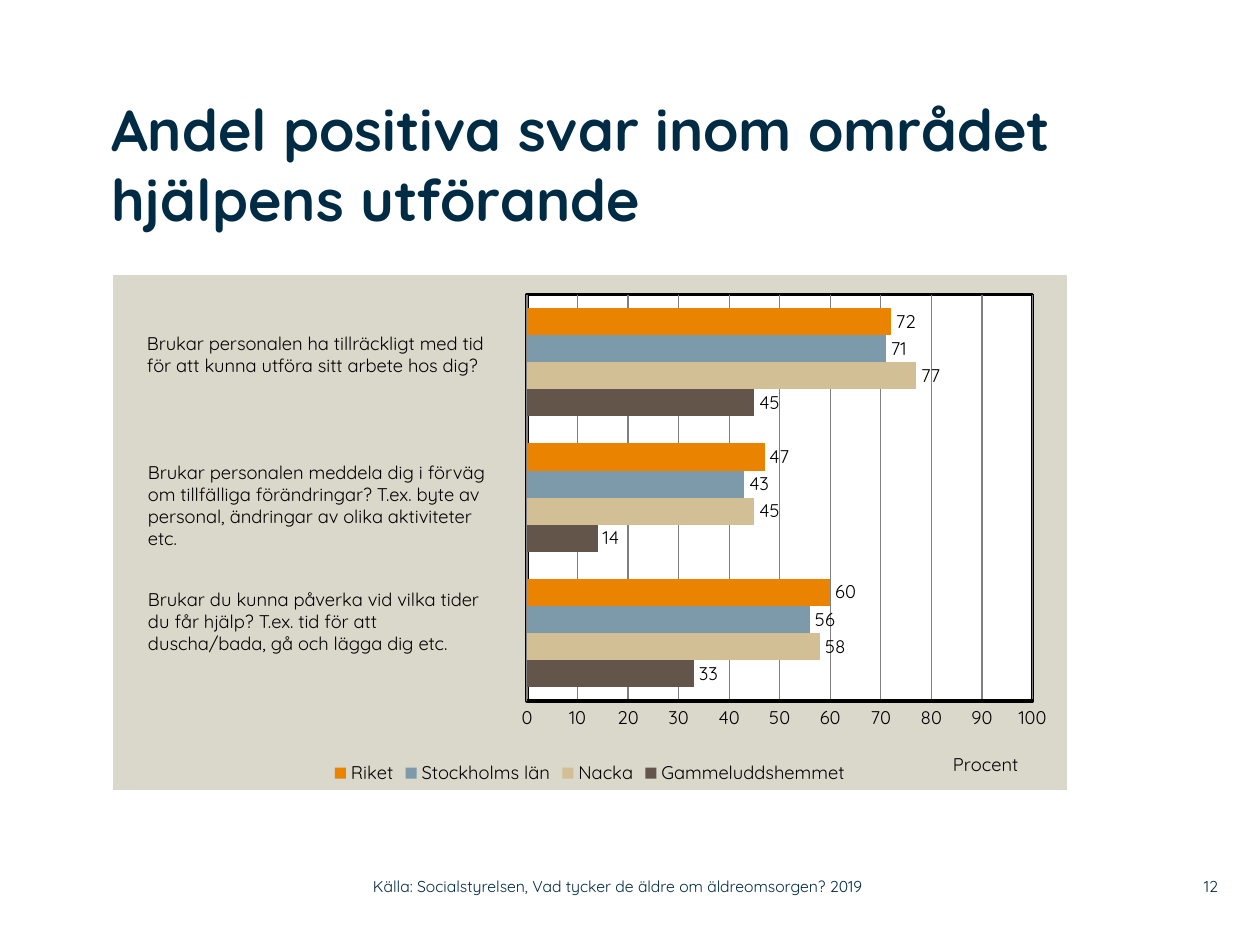
from lxml.etree import SubElement
from pptx import Presentation
from pptx.chart.data import CategoryChartData
from pptx.dml.color import RGBColor
from pptx.enum.chart import XL_CHART_TYPE, XL_LABEL_POSITION, XL_LEGEND_POSITION, XL_TICK_MARK
from pptx.enum.text import MSO_ANCHOR, MSO_AUTO_SIZE, PP_ALIGN
from pptx.oxml import parse_xml
from pptx.oxml.ns import nsdecls, qn
from pptx.util import Pt

SCALE = 914400 / 126
FONT = "Quicksand"
COLORS = {
    "navy": "002B45", "black": "000000", "white": "FFFFFF", "panel": "DAD7CB", "grid": "808080",
    "Gammeluddshemmet": "635549", "Nacka": "D3BF96", "Stockholms län": "7D9AAA", "Riket": "E98300",
}
ANSWERS = {
    "Gammeluddshemmet": (33, 14, 45),
    "Nacka": (58, 45, 77),
    "Stockholms län": (56, 43, 71),
    "Riket": (60, 47, 72),
}
QUESTIONS = [
    (134, 326, 377, 57, ["Brukar personalen ha tillräckligt med tid",
                         "för att kunna utföra sitt arbete hos dig?"]),
    (135, 455, 374, 102, ["Brukar personalen meddela dig i förväg om tillfälliga förändringar? "
                          "T.ex. byte av personal, ändringar av olika aktiviteter etc."]),
    (135, 582, 374, 79, ["Brukar du kunna påverka vid vilka tider",
                         "du får hjälp? T.ex. tid för att",
                         "duscha/bada, gå och lägga dig etc."]),
]


def px(length):
    """Turn a length in px into EMU."""
    return round(length * SCALE)


def rgb(name):
    """Look up a colour by name."""
    return RGBColor.from_string(COLORS[name])


def style_font(font, size=10.5, color="black", bold=False):
    """Give a font its face, size, weight and colour."""
    font.name, font.size, font.bold = FONT, Pt(size), bold
    font.color.rgb = rgb(color)


def write(frame, lines, align=PP_ALIGN.LEFT, anchor=MSO_ANCHOR.TOP, inset=(0, 0),
          autosize=MSO_AUTO_SIZE.NONE, **style):
    """Fill a text frame with one paragraph per line."""
    frame.word_wrap, frame.auto_size, frame.vertical_anchor = True, autosize, anchor
    frame.margin_left = frame.margin_right = px(inset[0])
    frame.margin_top = frame.margin_bottom = px(inset[1])
    for number, line in enumerate(lines):
        paragraph = frame.add_paragraph() if number else frame.paragraphs[0]
        paragraph.alignment = align
        run = paragraph.add_run()
        run.text = line
        style_font(run.font, **style)


def add_text(slide, box, lines, **style):
    """Add a text box at the given px box."""
    write(slide.shapes.add_textbox(*map(px, box)).text_frame, lines, **style)


def place_title(slide, box):
    """Move the title placeholder and write the heading."""
    title = slide.shapes.title
    title.left, title.top, title.width, title.height = map(px, box)
    write(title.text_frame, ["Andel positiva svar inom området hjälpens utförande"],
          size=33, color="navy", bold=True)


def manual_layout(**settings):
    """Build a chart layout element from its settings."""
    layout = parse_xml(f"<c:layout {nsdecls('c')}><c:manualLayout/></c:layout>")
    for tag, value in settings.items():
        SubElement(layout[0], qn(f"c:{tag}")).set("val", str(value))
    return layout


def area_format(fill, line=None):
    """Build fill and outline properties for a chart area."""
    outline = (f'<a:ln w="{Pt(2)}"><a:solidFill><a:srgbClr val="{COLORS[line]}"/></a:solidFill></a:ln>'
               if line else "<a:ln><a:noFill/></a:ln>")
    return parse_xml(f'<c:spPr {nsdecls("c", "a")}><a:solidFill><a:srgbClr val="{COLORS[fill]}"/>'
                     f"</a:solidFill>{outline}</c:spPr>")


def format_areas(chart):
    """Colour the panel and place the framed plot area."""
    root = chart.element.find(qn("c:chart"))
    root.addnext(area_format("panel"))
    plot_area = root.find(qn("c:plotArea"))
    for layout in plot_area.findall(qn("c:layout")):
        plot_area.remove(layout)
    plot_area.insert(0, manual_layout(layoutTarget="inner", xMode="edge", yMode="edge",
                                      x=0.434, y=0.038, w=0.53, h=0.789))
    plot_area.append(area_format("white", "black"))


def format_axes(chart):
    """Hide the question axis and set up the percent axis."""
    chart.category_axis.visible = False
    percent = chart.value_axis
    percent.minimum_scale, percent.maximum_scale, percent.major_unit = 0, 100, 10
    percent.major_tick_mark = percent.minor_tick_mark = XL_TICK_MARK.NONE
    percent.has_major_gridlines = True
    for line, color, width in ((percent.format.line, "black", 2),
                               (percent.major_gridlines.format.line, "grid", 0.75)):
        line.color.rgb, line.width = rgb(color), Pt(width)
    style_font(percent.tick_labels.font)
    title = percent.axis_title
    title.text_frame.text = "Procent"
    style_font(title.text_frame.paragraphs[0].runs[0].font)
    element = title._element
    for layout in element.findall(qn("c:layout")):
        element.remove(layout)
    element.find(qn("c:tx")).addnext(manual_layout(xMode="edge", yMode="edge", x=0.877, y=0.917))


def add_answer_chart(slide, box):
    """Add the clustered bars with labels and legend."""
    data = CategoryChartData()
    data.categories = ["1", "2", "3"]
    for name, values in ANSWERS.items():
        data.add_series(name, values)
    chart = slide.shapes.add_chart(XL_CHART_TYPE.BAR_CLUSTERED, *map(px, box), data).chart
    style_font(chart.font)
    chart.has_title = False
    format_areas(chart)
    format_axes(chart)
    bars = chart.plots[0]
    bars.gap_width, bars.overlap, bars.vary_by_categories = 100, 0, False
    for series in bars.series:
        series.format.fill.solid()
        series.format.fill.fore_color.rgb = rgb(series.name)
        labels = series.data_labels
        labels.show_value, labels.position = True, XL_LABEL_POSITION.OUTSIDE_END
        style_font(labels.font)
    chart.has_legend = True
    chart.legend.position, chart.legend.include_in_layout = XL_LEGEND_POSITION.BOTTOM, False
    style_font(chart.legend.font)


def add_questions(slide):
    """Write the question beside each group of bars."""
    for *box, lines in QUESTIONS:
        add_text(slide, box, lines, inset=(13, 6), autosize=MSO_AUTO_SIZE.SHAPE_TO_FIT_TEXT)


def add_footer(slide, top, height):
    """Write the source and the page number on one row."""
    style = dict(size=9, color="navy", anchor=MSO_ANCHOR.MIDDLE)
    add_text(slide, (1159, top, 59, height), ["12"], align=PP_ALIGN.RIGHT, **style)
    add_text(slide, (373, top, 558, height),
             ["Källa: Socialstyrelsen, Vad tycker de äldre om äldreomsorgen? 2019"], **style)


def main():
    """Build the slide and save it."""
    deck = Presentation()
    deck.slide_width, deck.slide_height = px(1260), px(945)
    slide = deck.slides.add_slide(deck.slide_layouts[5])
    place_title(slide, (111, 94, 958, 179))
    add_answer_chart(slide, (113, 275, 954, 515))
    add_questions(slide)
    add_footer(slide, 868, 37)
    deck.save("out.pptx")


if __name__ == "__main__":
    main()
